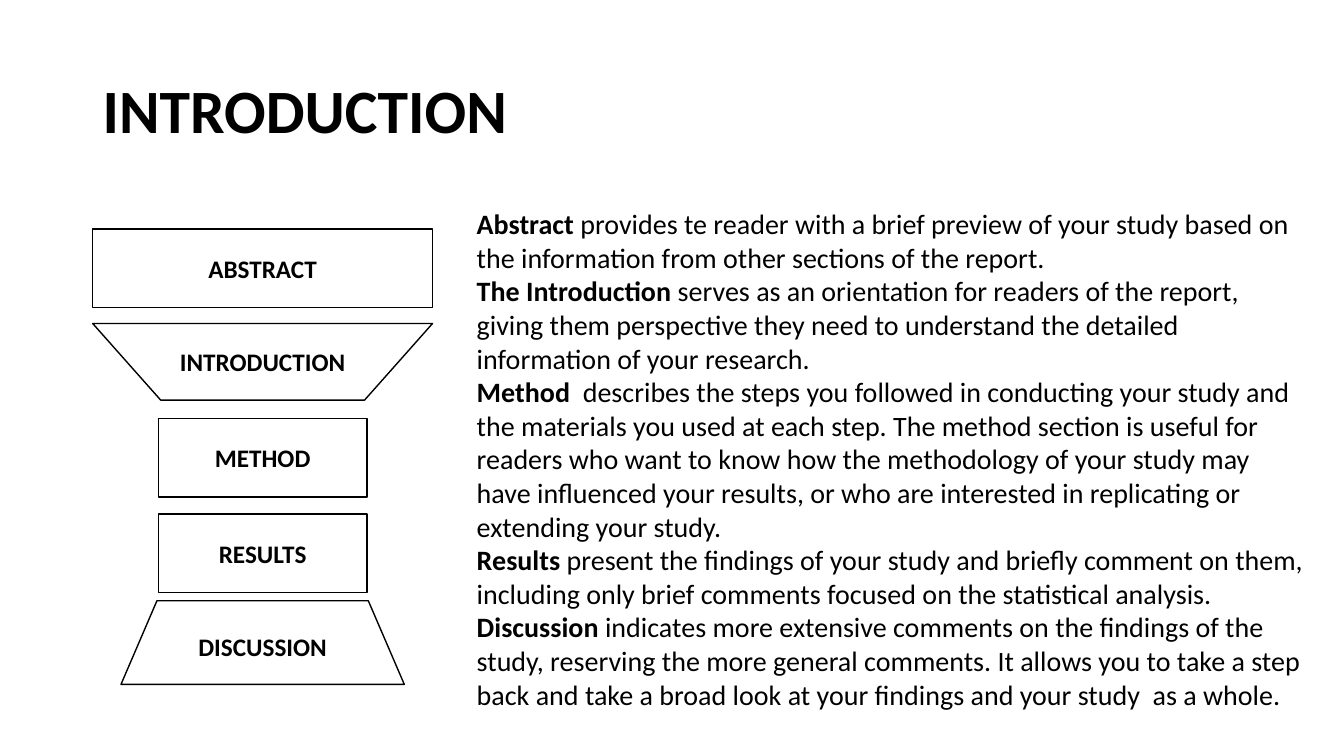
from dataclasses import dataclass

from pptx import Presentation
from pptx.dml.color import RGBColor
from pptx.enum.shapes import MSO_SHAPE
from pptx.enum.text import MSO_ANCHOR, PP_ALIGN
from pptx.slide import Slide
from pptx.text.text import TextFrame, _Paragraph
from pptx.util import Inches, Pt

RECTANGLE = MSO_SHAPE.RECTANGLE
FUNNEL = MSO_SHAPE.FLOWCHART_MANUAL_OPERATION
TRAPEZOID = MSO_SHAPE.TRAPEZOID
MIDDLE, TOP = MSO_ANCHOR.MIDDLE, MSO_ANCHOR.TOP
CENTER = PP_ALIGN.CENTER

COLORS = {"ink": "000000", "paper": "FFFFFF"}
FONT = "Calibri"
STACK_CENTER = 2.605


@dataclass(frozen=True)
class Stage:
    label: str
    kind: MSO_SHAPE
    top: float
    width: float
    height: float


@dataclass(frozen=True)
class Section:
    name: str
    description: str


STAGES = [
    Stage("ABSTRACT", RECTANGLE, 2.27, 3.37, 0.78),
    Stage("INTRODUCTION", FUNNEL, 3.21, 3.37, 0.76),
    Stage("METHOD", RECTANGLE, 4.15, 2.07, 0.78),
    Stage("RESULTS", RECTANGLE, 5.1, 2.07, 0.78),
    Stage("DISCUSSION", TRAPEZOID, 5.96, 2.81, 0.83),
]

SECTIONS = [
    Section(
        "Abstract ",
        "provides te reader with a brief preview of your study based on "
        "the information from other sections of the report.",
    ),
    Section(
        "The Introduction ",
        "serves as an orientation for readers of the report, giving them "
        "perspective they need to understand the detailed information of "
        "your research.",
    ),
    Section(
        "Method ",
        " describes the steps you followed in conducting your study and the "
        "materials you used at each step. The method section is useful for "
        "readers who want to know how the methodology of your study may have "
        "influenced your results, or who are interested in replicating or "
        "extending your study.",
    ),
    Section(
        "Results",
        " present the findings of your study and briefly comment on them, "
        "including only brief comments focused on the statistical analysis.",
    ),
    Section(
        "Discussion ",
        "indicates more extensive comments on the findings of the study, "
        "reserving the more general comments. It allows you to take a step "
        "back and take a broad look at your findings and your study  as a whole.",
    ),
]


def color(name: str) -> RGBColor:
    return RGBColor.from_string(COLORS[name])


def add_span(para: _Paragraph, text: str, size: float, bold: bool = True) -> None:
    span = para.add_run()
    span.text = text
    span.font.name = FONT
    span.font.size = Pt(size)
    span.font.bold = bold
    span.font.color.rgb = color("ink")


def add_text_box(page: Slide, left: float, top: float, width: float,
                 height: float, anchor: MSO_ANCHOR) -> TextFrame:
    box = page.shapes.add_textbox(
        Inches(left), Inches(top), Inches(width), Inches(height))
    frame = box.text_frame
    frame.word_wrap = True
    frame.vertical_anchor = anchor
    return frame


def add_stage(page: Slide, stage: Stage) -> None:
    box = page.shapes.add_shape(
        stage.kind, Inches(STACK_CENTER - stage.width / 2), Inches(stage.top),
        Inches(stage.width), Inches(stage.height))
    if stage.kind == TRAPEZOID:
        box.adjustments[0] = 0.43
    box.shadow.inherit = False
    box.fill.solid()
    box.fill.fore_color.rgb = color("paper")
    box.line.color.rgb = color("ink")
    box.line.width = Pt(1)
    box.text_frame.vertical_anchor = MIDDLE
    para = box.text_frame.paragraphs[0]
    para.alignment = CENTER
    add_span(para, stage.label, 18)


def add_sections(page: Slide, sections: list[Section]) -> None:
    frame = add_text_box(page, 4.63, 2, 8.45, 5.49, TOP)
    for index, section in enumerate(sections):
        para = frame.add_paragraph() if index else frame.paragraphs[0]
        add_span(para, section.name, 20)
        add_span(para, section.description, 20, bold=False)


def main() -> None:
    deck = Presentation()
    deck.slide_width, deck.slide_height = Inches(13.33), Inches(7.5)
    page = deck.slides.add_slide(deck.slide_layouts[6])

    # Title
    title = add_text_box(page, 0.92, 0.4, 11.5, 1.45, MIDDLE).paragraphs[0]
    title.line_spacing = 0.9
    add_span(title, "INTRODUCTION", 44)

    # Report shape, from abstract to discussion
    for stage in STAGES:
        add_stage(page, stage)

    # Description of each section
    add_sections(page, SECTIONS)

    deck.save("out.pptx")


if __name__ == "__main__":
    main()
